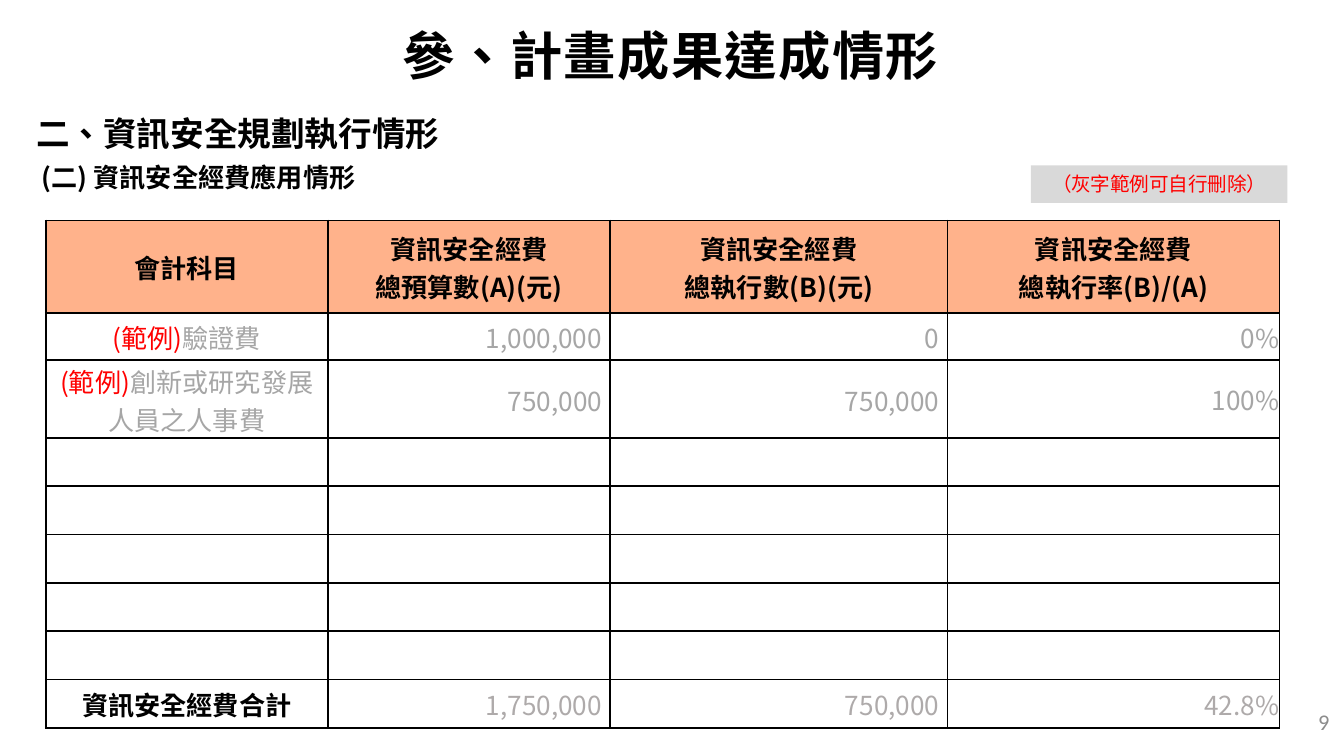
from pptx import Presentation
from pptx.util import Inches, Pt
from pptx.dml.color import RGBColor
from pptx.enum.lang import MSO_LANGUAGE_ID as Lang
from pptx.enum.shapes import MSO_SHAPE as Shape
from pptx.enum.text import PP_ALIGN as Align, MSO_ANCHOR as Anchor, MSO_AUTO_SIZE as Auto
from pptx.oxml import parse_xml
from pptx.oxml.ns import nsdecls, qn
from lxml.etree import SubElement

BLACK = RGBColor(0x00, 0x00, 0x00)
RED = RGBColor(0xFF, 0x00, 0x00)
PEACH = RGBColor(0xFF, 0xB2, 0x8B)
PALE = RGBColor(0xD9, 0xD9, 0xD9)
GRAY = RGBColor(0xA6, 0xA6, 0xA6)
ASH = RGBColor(0xAE, 0xAA, 0xAA)
DIM = RGBColor(0x8C, 0x8C, 0x8C)
CJK = "Noto Sans CJK SC"


def write(para, text, size, color, bold=False, name=CJK):
    run = para.add_run()
    run.text = text
    look = {"size": Pt(size), "bold": bold, "name": name,
            "language_id": Lang.TRADITIONAL_CHINESE}
    for key, val in look.items():
        setattr(run.font, key, val)
    run.font.color.rgb = color
    props = run._r.get_or_add_rPr()
    SubElement(props, qn("a:ea")).set("typeface", name)
    return props


def frame(shape, align, anchor):
    body = shape.text_frame
    look = {"word_wrap": True, "auto_size": Auto.NONE, "vertical_anchor": anchor}
    for key, val in look.items():
        setattr(body, key, val)
    para = body.paragraphs[0]
    para.alignment = align
    return para


deck = Presentation()
deck.slide_width, deck.slide_height = Inches(10), Inches(10) * 9 // 16
slide = deck.slides.add_slide(deck.slide_layouts[5])
shapes = slide.shapes

head = shapes.add_textbox(Inches(-0.01), Inches(-0.02), Inches(10), Inches(0.85))
props = write(frame(head, Align.CENTER, Anchor.MIDDLE), "參、計畫成果達成情形", 28, BLACK, True)
props.set("spc", "80")

title = shapes.title
place = {"left": 0.21, "top": 1.21, "width": 7.39, "height": 0.21}
for key, val in place.items():
    setattr(title, key, Inches(val))
write(frame(title, Align.LEFT, Anchor.MIDDLE), "(二) 資訊安全經費應用情形", 14, BLACK, True)

part = shapes.add_textbox(Inches(0.17), Inches(0.79), Inches(9.17), Inches(0.4))
write(frame(part, Align.LEFT, Anchor.TOP), "二、資訊安全規劃執行情形", 18, BLACK, True)

note = shapes.add_shape(Shape.RECTANGLE, Inches(7.67), Inches(1.23), Inches(1.91), Inches(0.28))
note.shadow.inherit = False
note.fill.solid()
note.fill.fore_color.rgb = PALE
note.line.fill.background()
write(frame(note, Align.CENTER, Anchor.MIDDLE), "（灰字範例可自行刪除）", 10.5, RED)

page = shapes.add_textbox(Inches(7.74), Inches(5.22), Inches(2.25), Inches(0.3))
write(frame(page, Align.RIGHT, Anchor.MIDDLE), "9", 12, DIM, name="Calibri")

MARK = "(範例)"
rows = [
    ["會計科目", "資訊安全經費\n總預算數(A)(元)", "資訊安全經費\n總執行數(B)(元)", "資訊安全經費\n總執行率(B)/(A)"],
    [MARK + "驗證費", "1,000,000", "0", "0%"],
    [MARK + "創新或研究發展人員之人事費", "750,000", "750,000", "100%"],
    *[[""] * 4 for _ in range(5)],
    ["資訊安全經費合計", "1,750,000", "750,000", "42.8%"],
]
wide = [2.1, 2.1, 2.51, 2.47]
high = [0.69, 0.35, 0.52] + [0.36] * 6
last = len(rows) - 1

grid = shapes.add_table(
    len(rows), len(wide), Inches(0.34), Inches(1.64), Inches(sum(wide)), Inches(sum(high))
).table
for col, size in zip(grid.columns, wide):
    col.width = Inches(size)
for row, size in zip(grid.rows, high):
    row.height = Inches(size)

for r, row in enumerate(rows):
    for c, text in enumerate(row):
        cell = grid.cell(r, c)
        side = Inches(0 if c == 3 else 0.06)
        look = {"margin_left": side, "margin_right": side,
                "margin_top": Inches(0 if c == 3 else 0.01),
                "margin_bottom": 0, "vertical_anchor": Anchor.MIDDLE}
        for key, val in look.items():
            setattr(cell, key, val)
        props = cell._tc.get_or_add_tcPr()
        for edge in "LRTB":
            props.append(parse_xml(
                f'<a:ln{edge} {nsdecls("a")} w="12700"><a:solidFill>'
                f'<a:srgbClr val="{BLACK}"/></a:solidFill></a:ln{edge}>'))
        if r == 0:
            cell.fill.solid()
            cell.fill.fore_color.rgb = PEACH
        else:
            cell.fill.background()
        if not text:
            continue
        bold = r == 0 or (r == last and c == 0)
        color = BLACK if bold else ASH if r == last else GRAY
        body = cell.text_frame
        for n, line in enumerate(text.split("\n")):
            para = body.add_paragraph() if n else body.paragraphs[0]
            para.alignment = Align.CENTER if r == 0 or c == 0 else Align.RIGHT
            if line.startswith(MARK):
                write(para, MARK, 14, RED)
                line = line.removeprefix(MARK)
            write(para, line, 14, color, bold)

deck.save("out.pptx")
